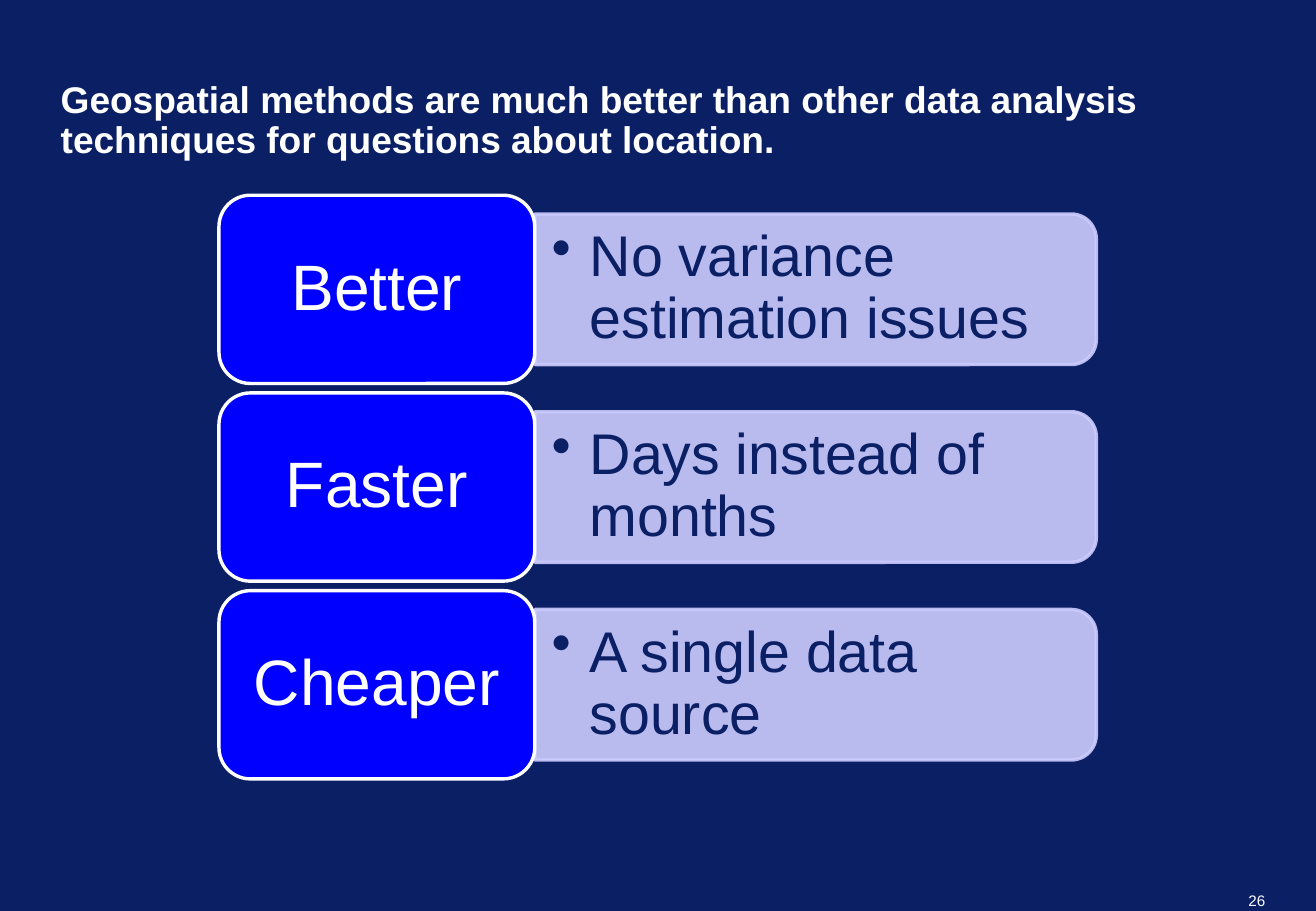
import pptx
import pptx.util
import pptx.dml.color
import pptx.enum.shapes
import pptx.enum.text
import pptx.oxml.ns
from lxml import etree

Pt = pptx.util.Pt
SHAPES = pptx.enum.shapes.MSO_SHAPE
ANCHOR = pptx.enum.text.MSO_ANCHOR
ALIGN = pptx.enum.text.PP_ALIGN
qn = pptx.oxml.ns.qn

COLORS = {"navy": "0B1F65", "blue": "0000FF", "lavender": "CCCCFF", "white": "FFFFFF"}


def rgb(name):
    return pptx.dml.color.RGBColor.from_string(COLORS[name])


def write(shape, text, size, color, align, anchor, inset_x=0, inset_y=0, bold=False):
    frame = shape.text_frame
    frame.word_wrap = True
    frame.auto_size = pptx.enum.text.MSO_AUTO_SIZE.NONE
    frame.vertical_anchor = anchor
    frame.margin_left = frame.margin_right = Pt(inset_x)
    frame.margin_top = frame.margin_bottom = Pt(inset_y)
    paragraph = frame.paragraphs[0]
    paragraph.alignment = align
    paragraph.line_spacing = 0.9
    run = paragraph.add_run()
    run.text = text
    run.font.name = "Arial"
    run.font.size = Pt(size)
    run.font.bold = bold
    run.font.color.rgb = rgb(color)
    return paragraph


prs = pptx.Presentation()
prs.slide_width, prs.slide_height = Pt(780), Pt(540)
slide = prs.slides.add_slide(prs.slide_layouts[5])
slide.background.fill.solid()
slide.background.fill.fore_color.rgb = rgb("navy")

# Title
title = slide.shapes.title
title.left, title.top, title.width, title.height = Pt(36), Pt(30), Pt(708), Pt(66)
write(title, "Geospatial methods are much better than other data analysis "
      "techniques for questions about location.",
      22, "white", ALIGN.LEFT, ANCHOR.BOTTOM, bold=True)

# Benefits: a label block with a detail bar to its right
BENEFITS = [
    ("Better", "No variance estimation issues"),
    ("Faster", "Days instead of months"),
    ("Cheaper", "A single data source"),
]
LABEL_LEFT, LABEL_WIDTH, LABEL_HEIGHT = 129.8, 187.2, 111.6
FIRST_TOP, ROW_PITCH = 115.7, 117.2
BAR_LEFT, BAR_LENGTH, BAR_THICKNESS = LABEL_LEFT + LABEL_WIDTH, 332.8, 89.3
DETAIL_WIDTH, DETAIL_HEIGHT = 328.4, 80.6

for row, (benefit, detail) in enumerate(BENEFITS):
    top = FIRST_TOP + row * ROW_PITCH
    middle = top + LABEL_HEIGHT / 2

    # Bar: an upright shape turned by 90 degrees about its centre
    bar = slide.shapes.add_shape(
        SHAPES.ROUND_2_SAME_RECTANGLE,
        Pt(BAR_LEFT + (BAR_LENGTH - BAR_THICKNESS) / 2), Pt(middle - BAR_LENGTH / 2),
        Pt(BAR_THICKNESS), Pt(BAR_LENGTH))
    bar.rotation = 90
    bar.shadow.inherit = False
    bar.fill.solid()
    bar.fill.fore_color.rgb = rgb("lavender")
    bar.line.color.rgb = rgb("lavender")
    bar.line.width = Pt(2)
    for color in bar._element.spPr.iter(qn("a:srgbClr")):
        etree.SubElement(color, qn("a:alpha"), val="90000")

    # Bulleted detail
    detail_box = slide.shapes.add_textbox(
        Pt(BAR_LEFT), Pt(middle - DETAIL_HEIGHT / 2), Pt(DETAIL_WIDTH), Pt(DETAIL_HEIGHT))
    bullet_line = write(detail_box, detail, 34, "navy", ALIGN.LEFT, ANCHOR.MIDDLE, 10, 5)
    properties = bullet_line._p.get_or_add_pPr()
    properties.set("marL", str(Pt(22.5)))
    properties.set("indent", str(-Pt(22.5)))
    etree.SubElement(properties, qn("a:buChar"), char="•")

    # Label
    label = slide.shapes.add_shape(
        SHAPES.ROUNDED_RECTANGLE, Pt(LABEL_LEFT), Pt(top), Pt(LABEL_WIDTH), Pt(LABEL_HEIGHT))
    label.shadow.inherit = False
    label.fill.solid()
    label.fill.fore_color.rgb = rgb("blue")
    label.line.color.rgb = rgb("white")
    label.line.width = Pt(2)
    write(label, benefit, 38, "white", ALIGN.CENTER, ANCHOR.MIDDLE, 11.5, 5.8)

# Page number
page_number = slide.shapes.add_textbox(Pt(720), Pt(528.5), Pt(30), Pt(11))
write(page_number, "26", 9, "white", ALIGN.RIGHT, ANCHOR.TOP).line_spacing = 1.0

prs.save("out.pptx")
